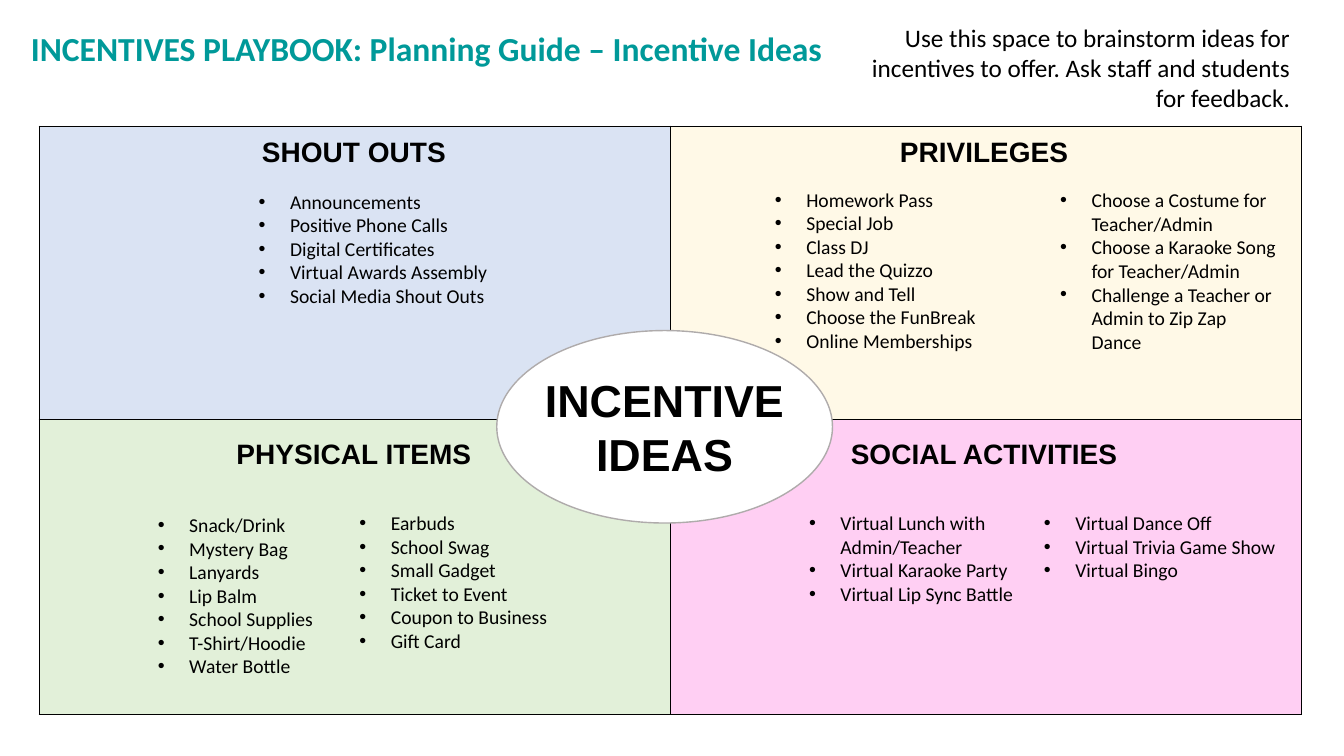
from pptx import Presentation
from pptx.dml.color import RGBColor
from pptx.enum.shapes import MSO_SHAPE
from pptx.enum.text import MSO_ANCHOR, PP_ALIGN
from pptx.oxml.ns import qn
from pptx.util import Cm, Pt
from lxml import etree

LEFT, CENTER, RIGHT = PP_ALIGN.LEFT, PP_ALIGN.CENTER, PP_ALIGN.RIGHT
MIDDLE = MSO_ANCHOR.MIDDLE
OVAL = MSO_SHAPE.OVAL

THEME = {
    "title": ("Calibri", 24, True, "009999"),
    "intro": ("Calibri", 18, False, "000000"),
    "heading": ("Arial", 20, True, "000000"),
    "list": ("Calibri", 14, False, "000000"),
    "hub": ("Arial", 32, True, "000000"),
    "border": "000000",
    "hub_fill": "FFFFFF",
    "hub_line": "AFABAB",
    # Fill colour and opacity in percent, by row and column
    "quadrants": [[("DAE3F3", 100), ("FFE699", 23)],
                  [("E2F0D9", 100), ("FF33CC", 23)]],
}


def write(tf, lines, style, align=LEFT, bullets=False):
    font, size, bold, color = THEME[style]
    for i, line in enumerate(lines):
        p = tf.paragraphs[0] if i == 0 else tf.add_paragraph()
        p.text = line
        p.alignment = align
        p.font.name, p.font.size, p.font.bold = font, Pt(size), bold
        p.font.color.rgb = RGBColor.from_string(color)
        if bullets:
            pPr = p._p.get_or_add_pPr()
            pPr.set("marL", str(Cm(0.79)))
            pPr.set("indent", str(-Cm(0.79)))
            bu_font = etree.Element(qn("a:buFont"), typeface="Arial")
            bu_char = etree.Element(qn("a:buChar"), char="•")
            pPr.insert(0, bu_font)
            pPr.insert(1, bu_char)


def add_text(box, lines, style, align=LEFT, bullets=False):
    tf = s.shapes.add_textbox(*(Cm(v) for v in box)).text_frame
    tf.word_wrap = True
    write(tf, lines, style, align, bullets)


prs = Presentation()
prs.slide_width, prs.slide_height = Cm(33.87), Cm(19.05)
s = prs.slides.add_slide(prs.slide_layouts[6])

# Title and instruction
add_text((0.53, 0.58, 20.65, 1.3),
         ["INCENTIVES PLAYBOOK: Planning Guide – Incentive Ideas"], "title")
add_text((21.18, 0.43, 11.58, 2.57),
         ["Use this space to brainstorm ideas for incentives to offer. "
          "Ask staff and students for feedback."], "intro", RIGHT)

# Four quadrants
table = s.shapes.add_table(2, 2, Cm(0.99), Cm(3.18), Cm(31.8), Cm(14.83)).table
table.first_row = table.horz_banding = False
for column in table.columns:
    column.width = Cm(15.9)
for row, height in zip(table.rows, (7.39, 7.44)):
    row.height = Cm(height)
for r, fills in enumerate(THEME["quadrants"]):
    for c, (color, opacity) in enumerate(fills):
        cell = table.cell(r, c)
        tcPr = cell._tc.get_or_add_tcPr()
        for side in ("a:lnL", "a:lnR", "a:lnT", "a:lnB"):
            ln = etree.SubElement(tcPr, qn(side), w=str(Pt(1)))
            ln_fill = etree.SubElement(ln, qn("a:solidFill"))
            etree.SubElement(ln_fill, qn("a:srgbClr"), val=THEME["border"])
        cell.fill.solid()
        cell.fill.fore_color.rgb = RGBColor.from_string(color)
        if opacity < 100:
            clr = tcPr.find(qn("a:solidFill")).find(qn("a:srgbClr"))
            etree.SubElement(clr, qn("a:alpha"), val=str(opacity * 1000))

# Central hub
hub = s.shapes.add_shape(OVAL, Cm(12.52), Cm(8.33), Cm(8.46), Cm(4.85))
hub.shadow.inherit = False
hub.fill.solid()
hub.fill.fore_color.rgb = RGBColor.from_string(THEME["hub_fill"])
hub.line.color.rgb = RGBColor.from_string(THEME["hub_line"])
hub.line.width = Pt(1)
hub.text_frame.word_wrap = False
hub.text_frame.vertical_anchor = MIDDLE
write(hub.text_frame, ["INCENTIVE", "IDEAS"], "hub", CENTER)

# Quadrant headings
headings = [["SHOUT OUTS", "PRIVILEGES"],
            ["PHYSICAL ITEMS", "SOCIAL ACTIVITIES"]]
for names, top in zip(headings, (3.26, 10.88)):
    for name, left in zip(names, (0.99, 16.87)):
        add_text((left, top, 15.86, 1.88), [name], "heading", CENTER)

# Idea lists: left, top, width, height and items
idea_lists = [
    ((6.27, 4.65, 6.91, 3.25),
     ["Announcements", "Positive Phone Calls", "Digital Certificates",
      "Virtual Awards Assembly", "Social Media Shout Outs"]),
    ((19.28, 4.6, 7.34, 4.45),
     ["Homework Pass", "Special Job", "Class DJ", "Lead the Quizzo",
      "Show and Tell", "Choose the FunBreak", "Online Memberships"]),
    ((26.47, 4.62, 6.05, 4.45),
     ["Choose a Costume for Teacher/Admin",
      "Choose a Karaoke Song for Teacher/Admin",
      "Challenge a Teacher or Admin to Zip Zap Dance"]),
    ((3.73, 12.8, 5.11, 5.05),
     ["Snack/Drink", "Mystery Bag", "Lanyards", "Lip Balm",
      "School Supplies", "T-Shirt/Hoodie", "Water Bottle"]),
    ((8.81, 12.75, 5.92, 5.05),
     ["Earbuds", "School Swag", "Small Gadget", "Ticket to Event",
      "Coupon to Business", "Gift Card"]),
    ((20.14, 12.75, 5.92, 3.25),
     ["Virtual Lunch with Admin/Teacher", "Virtual Karaoke Party",
      "Virtual Lip Sync Battle"]),
    ((26.06, 12.75, 6.4, 3.84),
     ["Virtual Dance Off", "Virtual Trivia Game Show", "Virtual Bingo"]),
]
for box, items in idea_lists:
    add_text(box, items, "list", bullets=True)

prs.save("out.pptx")
